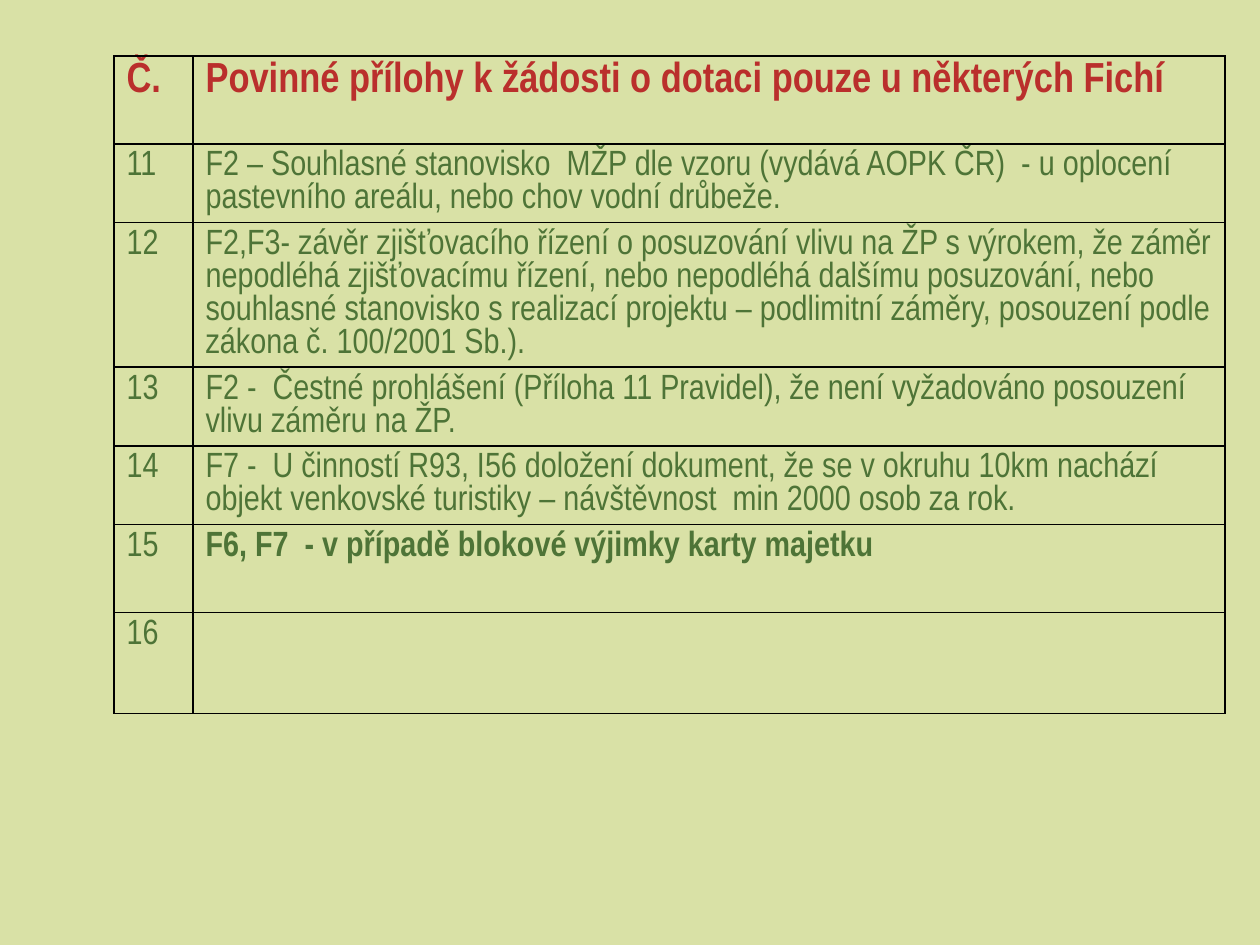
from lxml import etree
from pptx import Presentation, util as u
from pptx.dml.color import RGBColor
from pptx.oxml.ns import qn

PX = u.Inches(1) / 126
COLORS = {"background": "D9E1A6", "heading": "BA2F2C", "body": "4E7437", "border": "000000"}
FONT = "Arial Narrow"
COLUMN_WIDTHS = [79, 1032]
ROW_HEIGHTS = [88, 71, 71, 71, 71, 88, 101]
BOLD_CELLS = {(0, 0), (0, 1), (5, 1)}
ATTACHMENTS = [
    ("Č.", "Povinné přílohy k žádosti o dotaci pouze u některých Fichí"),
    ("11", "F2 – Souhlasné stanovisko  MŽP dle vzoru (vydává AOPK ČR)  - u oplocení "
           "pastevního areálu, nebo chov vodní drůbeže."),
    ("12", "F2,F3- závěr zjišťovacího řízení o posuzování vlivu na ŽP s výrokem, že záměr "
           "nepodléhá zjišťovacímu řízení, nebo nepodléhá dalšímu posuzování, nebo "
           "souhlasné stanovisko s realizací projektu – podlimitní záměry, posouzení podle "
           "zákona č. 100/2001 Sb.)."),
    ("13", "F2 -  Čestné prohlášení (Příloha 11 Pravidel), že není vyžadováno posouzení "
           "vlivu záměru na ŽP."),
    ("14", "F7 -  U činností R93, I56 doložení dokument, že se v okruhu 10km nachází "
           "objekt venkovské turistiky – návštěvnost  min 2000 osob za rok."),
    ("15", "F6, F7  - v případě blokové výjimky karty majetku"),
    ("16", ""),
]


def px(length):
    """Turn a length in px into EMU."""
    return u.Emu(round(length * PX))


def set_borders(cell):
    """Draw a thin solid line on all four sides of a cell."""
    properties = cell._tc.get_or_add_tcPr()
    for index, side in enumerate(("lnL", "lnR", "lnT", "lnB")):
        line = etree.Element(qn(f"a:{side}"), w=str(u.Pt(1)))
        fill = etree.SubElement(line, qn("a:solidFill"))
        etree.SubElement(fill, qn("a:srgbClr"), val=COLORS["border"])
        properties.insert(index, line)


def format_cell(cell, words, heading, bold):
    """Fill one cell with its words and its look."""
    cell.fill.background()
    set_borders(cell)
    cell.margin_left = cell.margin_right = u.Inches(0.1)
    cell.margin_top = cell.margin_bottom = u.Inches(0.05)
    cell.text = words
    para = cell.text_frame.paragraphs[0]
    for font in [para.font] + [span.font for span in para.runs]:
        font.name = FONT
        font.size = u.Pt(24 if heading else 20)
        font.bold = bold
        font.color.rgb = RGBColor.from_string(COLORS["heading" if heading else "body"])


def add_attachments(page, left, top):
    """Place the table of required attachments at the given corner."""
    frame = page.shapes.add_table(
        len(ROW_HEIGHTS), len(COLUMN_WIDTHS), px(left), px(top),
        px(sum(COLUMN_WIDTHS)), px(sum(ROW_HEIGHTS)))
    table = frame.table
    table.horz_banding = False
    for column, width in zip(table.columns, COLUMN_WIDTHS):
        column.width = px(width)
    for row, height in zip(table.rows, ROW_HEIGHTS):
        row.height = px(height)
    for r, entry in enumerate(ATTACHMENTS):
        for c, words in enumerate(entry):
            format_cell(table.cell(r, c), words, r == 0, (r, c) in BOLD_CELLS)


def main():
    """Build the deck and save it."""
    deck = Presentation()
    deck.slide_width, deck.slide_height = px(1260), px(945)
    page = deck.slides.add_slide(deck.slide_layouts[6])
    page.background.fill.solid()
    page.background.fill.fore_color.rgb = RGBColor.from_string(COLORS["background"])
    add_attachments(page, 114, 56)
    deck.save("out.pptx")


if __name__ == "__main__":
    main()
